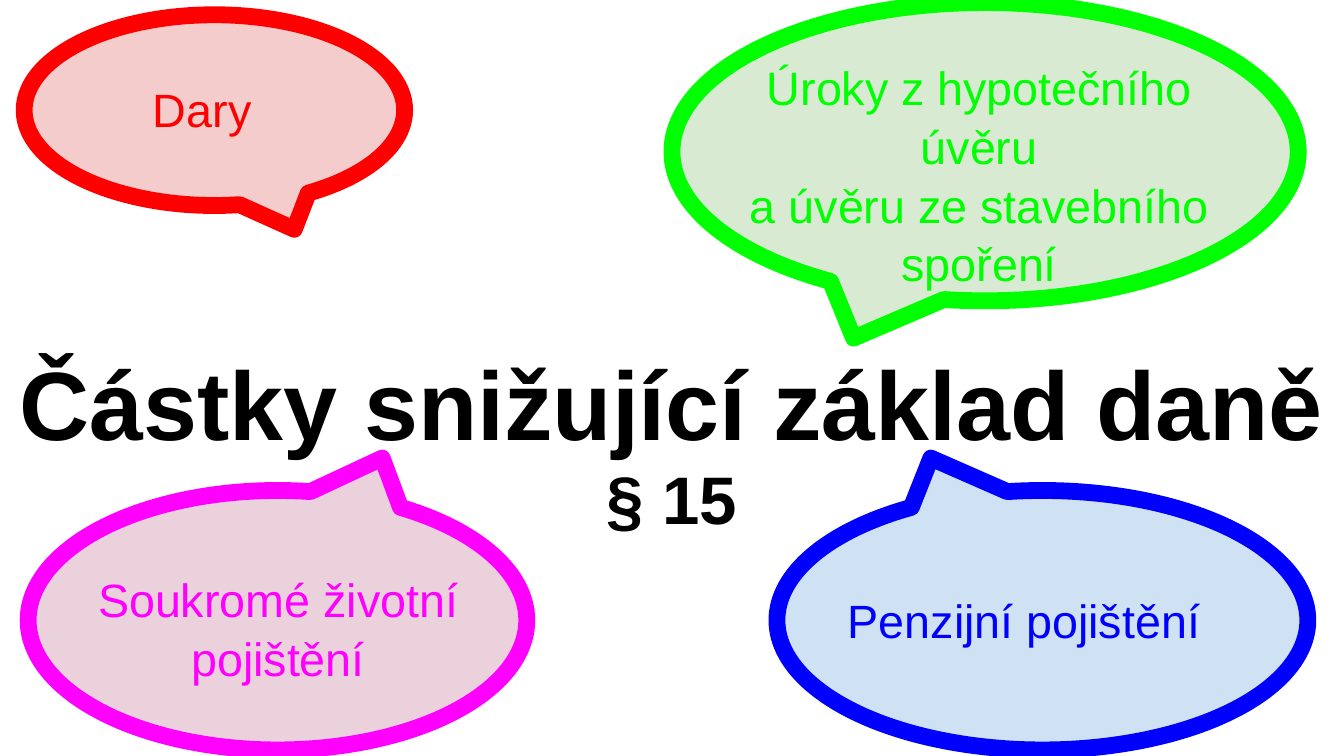
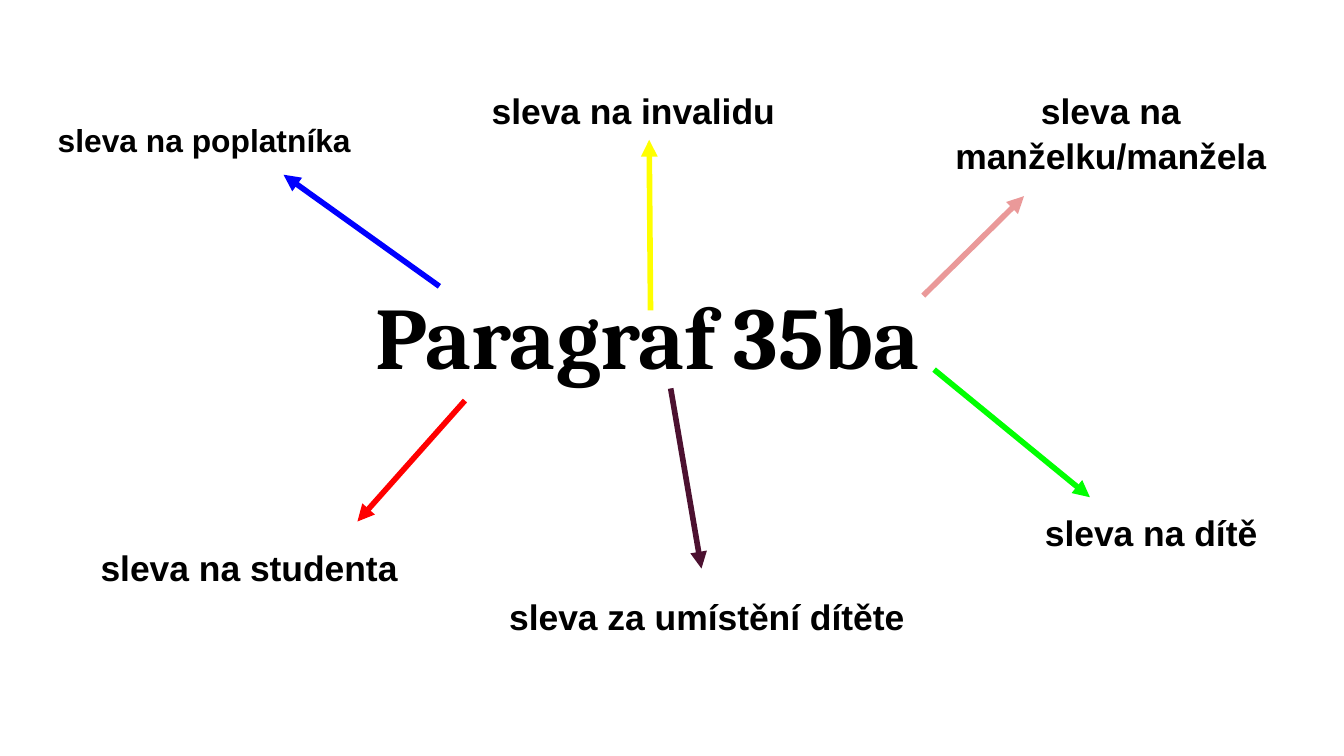
from lxml import etree
from pptx import Presentation
from pptx.dml.color import RGBColor
from pptx.enum.shapes import MSO_CONNECTOR, MSO_SHAPE
from pptx.enum.text import MSO_ANCHOR, MSO_AUTO_SIZE, PP_ALIGN
from pptx.oxml.ns import qn
from pptx.util import Pt

STRAIGHT = MSO_CONNECTOR.STRAIGHT
BUBBLE = MSO_SHAPE.OVAL_CALLOUT
TOP, BOTTOM = MSO_ANCHOR.TOP, MSO_ANCHOR.BOTTOM
LEFT, CENTER = PP_ALIGN.LEFT, PP_ALIGN.CENTER

BLACK = RGBColor(0x00, 0x00, 0x00)
BLUE = RGBColor(0x00, 0x00, 0xFF)
MAGENTA = RGBColor(0xFF, 0x00, 0xFF)
RED = RGBColor(0xFF, 0x00, 0x00)
GREEN = RGBColor(0x00, 0xFF, 0x00)
YELLOW = RGBColor(0xFF, 0xFF, 0x00)
SALMON = RGBColor(0xEA, 0x99, 0x99)
PLUM = RGBColor(0x4C, 0x11, 0x30)
PALE_BLUE = RGBColor(0xCF, 0xE2, 0xF3)
PALE_PINK = RGBColor(0xEA, 0xD1, 0xDC)
PALE_RED = RGBColor(0xF4, 0xCC, 0xCC)
PALE_GREEN = RGBColor(0xD9, 0xEA, 0xD3)

INSET = Pt(7.2)
LINE_SPACING = 1.05


def write(shape, box, lines, size, color=BLACK, bold=True, align=CENTER,
          anchor=TOP, font="Arial", spacing=LINE_SPACING):
    shape.left, shape.top, shape.width, shape.height = map(Pt, box)
    frame = shape.text_frame
    frame.auto_size = MSO_AUTO_SIZE.NONE
    frame.word_wrap = True
    frame.vertical_anchor = anchor
    frame.margin_left = frame.margin_right = INSET
    frame.margin_top = frame.margin_bottom = INSET
    for index, line in enumerate(lines):
        paragraph = frame.add_paragraph() if index else frame.paragraphs[0]
        paragraph.alignment = align
        paragraph.line_spacing = spacing
        paragraph.space_before = Pt(0)
        run = paragraph.add_run()
        run.text = line
        run.font.name = font
        run.font.size = Pt(size)
        run.font.bold = bold
        run.font.color.rgb = color


prs = Presentation()
prs.slide_width, prs.slide_height = Pt(720), Pt(405)
title_layout = prs.slide_layouts[0]

deductions = prs.slides.add_slide(title_layout)
heading = deductions.shapes.title
section = deductions.placeholders[1]
write(heading, (0, 171.4, 720, 82), ["Částky snižující základ daně"], 52,
      anchor=BOTTOM, spacing=1)
write(section, (24.5, 235.4, 671, 62.6), ["§ 15"], 36)

deduction_bubbles = [
    ((416.2, 262.8, 284.4, 139), (-0.21, -0.625), PALE_BLUE, BLUE,
     (447.1, 308.2, 222.5, 48.2), LEFT, ["Penzijní pojištění"]),
    ((15.1, 262.8, 267.1, 139), (0.21, -0.625), PALE_PINK, MAGENTA,
     (41, 297.4, 216, 69.1), CENTER, ["Soukromé životní pojištění"]),
    ((13, 7.9, 203.8, 102.2), (0.21, 0.625), PALE_RED, RED,
     (74.9, 34.6, 79.2, 48.2), LEFT, ["Dary"]),
    ((360, 1.4, 335.5, 159.8), (-0.21, 0.625), PALE_GREEN, GREEN,
     (391, 23, 267.1, 102.2), CENTER,
     ["Úroky z hypotečního úvěru", "a úvěru ze stavebního spoření"]),
]
for outline, tip, fill, color, label_box, align, lines in deduction_bubbles:
    bubble = deductions.shapes.add_shape(BUBBLE, *map(Pt, outline))
    bubble.shadow.inherit = False
    bubble.adjustments[0], bubble.adjustments[1] = tip
    bubble.fill.solid()
    bubble.fill.fore_color.rgb = fill
    bubble.line.color.rgb = color
    bubble.line.width = Pt(9)
    etree.SubElement(bubble.element.spPr.find(qn("a:ln")), qn("a:round"))
    heading.element.addprevious(bubble.element)
    label = deductions.shapes.add_textbox(*map(Pt, label_box))
    write(label, label_box, lines, 25, color, bold=False, align=align)

credits = prs.slides.add_slide(title_layout)
unused_subtitle = credits.placeholders[1].element
unused_subtitle.getparent().remove(unused_subtitle)
write(credits.shapes.title, (38.2, 139, 617.8, 75.6), ["Paragraf 35ba"], 47,
      anchor=BOTTOM, font="Cambria", spacing=1)

credit_labels = [
    ("sleva na poplatníka", (23.8, 56.2, 562.3, 65.5), 17, LEFT),
    ("sleva na manželku/manžela", (479.5, 39.6, 231.1, 65.5), 19, CENTER),
    ("sleva na invalidu", (256.3, 39.6, 221.8, 62.6), 19, LEFT),
    ("sleva na studenta", (46.8, 284.4, 562.3, 65.5), 19, LEFT),
    ("sleva za umístění dítěte", (265.7, 310.3, 454.3, 65.5), 19, LEFT),
    ("sleva na dítě", (513.4, 265.7, 206.6, 103.7), 19, CENTER),
]
for credit, box, size, align in credit_labels:
    label = credits.shapes.add_textbox(*map(Pt, box))
    write(label, box, [credit], size, align=align)

credit_arrows = [
    ((249.1, 214.6, 191.5, 279.4), RED),
    ((359.3, 208.1, 375.8, 304.6), PLUM),
    ((500.4, 198, 583.9, 266.4), GREEN),
    ((235.4, 153.4, 151.9, 93.6), BLUE),
    ((348.5, 166.3, 347.8, 74.9), YELLOW),
    ((494.6, 158.4, 548.6, 105.1), SALMON),
]
for ends, color in credit_arrows:
    arrow = credits.shapes.add_connector(STRAIGHT, *map(Pt, ends))
    arrow.line.color.rgb = color
    arrow.line.width = Pt(3)
    properties = arrow.element.spPr
    etree.SubElement(properties.find(qn("a:ln")), qn("a:tailEnd"), type="triangle")
    etree.SubElement(properties, qn("a:effectLst"))

prs.save("out.pptx")
